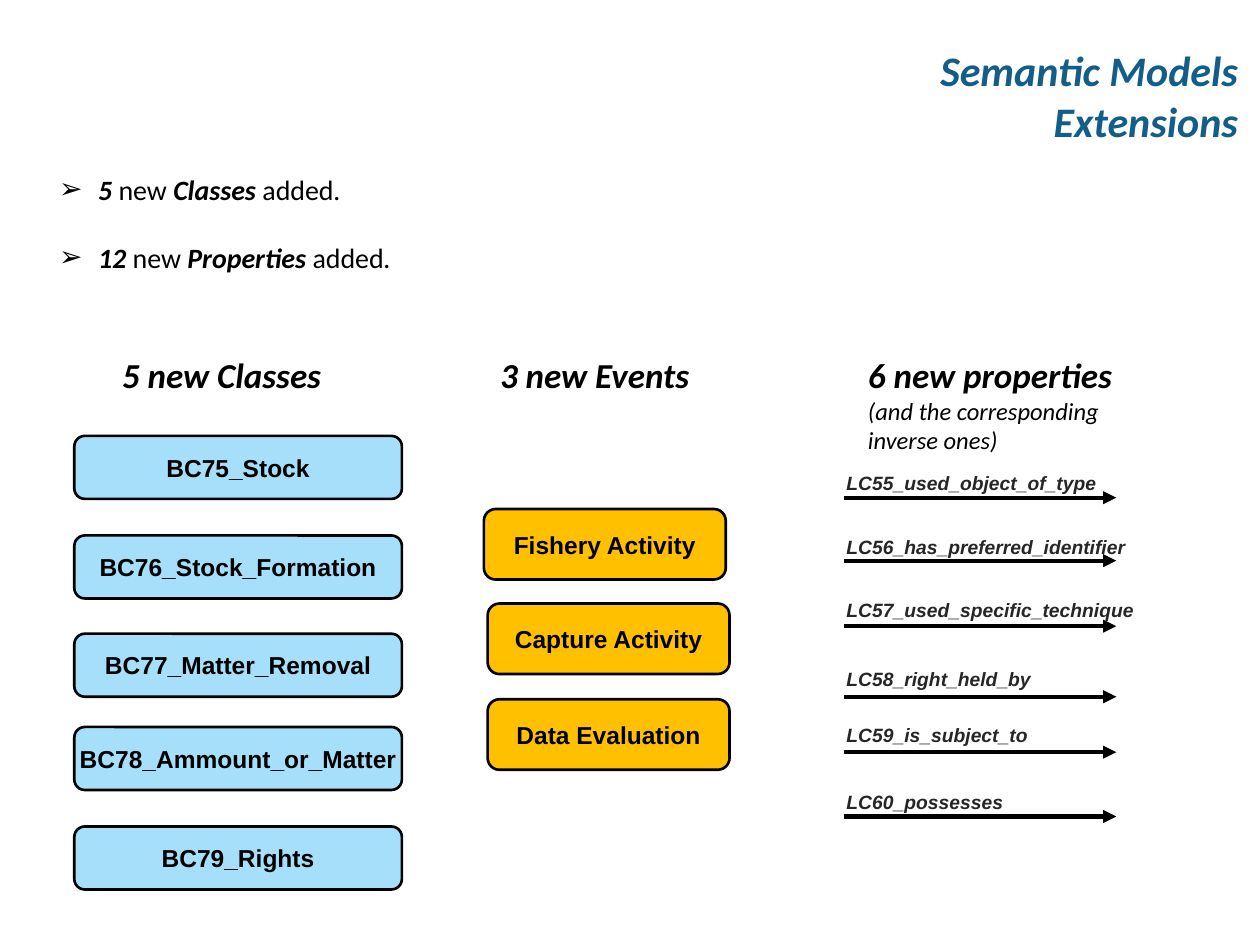
from lxml.etree import SubElement as Sub
from pptx import Presentation
from pptx.dml.color import RGBColor as Rgb
from pptx.enum.shapes import MSO_CONNECTOR as Conn, MSO_SHAPE as Shape
from pptx.enum.text import MSO_ANCHOR as Anchor, PP_ALIGN as Align
from pptx.oxml.ns import qn
from pptx.util import Inches, Pt

HUES = {"title": "125E89", "ink": "000000", "label": "262626",
        "class": "A5DFF9", "event": "FFC000"}

# Text, bold, italic
BULLETS = [
    [("5 ", True, True), ("new ", False, False), ("Classes", True, True),
     (" added", False, False), (".", False, True)],
    [("12 ", True, True), ("new", False, False), (" Properties ", True, True),
     ("added", False, False), (".", False, True)],
]
HEADS = [(0.87, 1.92, "5 new Classes"), (3.87, 1.91, "3 new Events"),
         (6.79, 2.31, "6 new properties ")]
CLASSES = [(3.46, "BC75_Stock"), (4.25, "BC76_Stock_Formation"),
           (5.03, "BC77_Matter_Removal"), (5.77, "BC78_Ammount_or_Matter"),
           (6.56, "BC79_Rights")]
EVENTS = [(3.84, 4.04, "Fishery Activity"), (3.87, 4.79, "Capture Activity"),
          (3.87, 5.55, "Data Evaluation")]
# Label top, arrow height, text
PROPS = [(3.69, 3.95, "LC55_used_object_of_type"),
         (4.2, 4.45, "LC56_has_preferred_identifier"),
         (4.7, 4.97, "LC57_used_specific_technique"),
         (5.25, 5.53, "LC58_right_held_by"),
         (5.69, 5.97, "LC59_is_subject_to"),
         (6.22, 6.48, "LC60_possesses")]


def color(name):
    return Rgb.from_string(HUES[name])


def write(par, text, size, face="Calibri", hue="ink", bold=True, italic=True):
    run = par.add_run()
    run.text = text
    font = run.font
    font.name, font.size = face, Pt(size)
    font.bold, font.italic = bold, italic
    font.color.rgb = color(hue)


class Deck:
    """Holds the shared style and the current slide."""
    edge, stroke = 1.5, 2.5

    def __init__(self):
        self.prs = Presentation()
        self.prs.slide_width, self.prs.slide_height = Inches(10), Inches(7.5)
        self.slide = self.prs.slides.add_slide(self.prs.slide_layouts[6])

    def text(self, *place):
        """Add an empty wrapped text box and return its frame."""
        frame = self.slide.shapes.add_textbox(*map(Inches, place)).text_frame
        frame.word_wrap = True
        return frame

    def title(self, *lines):
        frame = self.text(2.83, 0.13, 7.17, 1.25)
        frame.vertical_anchor = Anchor.MIDDLE
        par = frame.paragraphs[0]
        par.alignment = Align.RIGHT
        for n, line in enumerate(lines):
            if n:
                par.add_line_break()
            write(par, line, 24, hue="title")

    def bullets(self, items):
        frame = self.text(0.37, 1.32, 4.25, 1.45)
        for n, item in enumerate(items):
            par = frame.add_paragraph() if n else frame.paragraphs[0]
            par.alignment = Align.JUSTIFY
            props = par._p.get_or_add_pPr()
            props.set("marL", str(Inches(0.31)))
            props.set("indent", str(Inches(-0.31)))
            if n:
                par.space_before = Pt(19.5)
            Sub(props, qn("a:buFont"), typeface="Arial")
            Sub(props, qn("a:buChar"), char="➢")
            for text, bold, italic in item:
                write(par, text, 16, bold=bold, italic=italic)

    def head(self, left, width, text, note=""):
        par = self.text(left, 2.76, width, 0.91 if note else 0.44).paragraphs[0]
        write(par, text, 20)
        if note:
            write(par, note, 14, bold=False)

    def box(self, left, top, width, height, text, hue):
        box = self.slide.shapes.add_shape(
            Shape.ROUNDED_RECTANGLE, *map(Inches, (left, top, width, height)))
        box.shadow.inherit = False
        box.fill.solid()
        box.fill.fore_color.rgb = color(hue)
        box.line.color.rgb = color("ink")
        box.line.width = Pt(self.edge)
        frame = box.text_frame
        frame.word_wrap = False
        frame.vertical_anchor = Anchor.MIDDLE
        par = frame.paragraphs[0]
        par.alignment = Align.CENTER
        write(par, text, 14, "Arial", italic=False)

    def arrow(self, left, right, y):
        line = self.slide.shapes.add_connector(
            Conn.STRAIGHT, *map(Inches, (left, y, right, y)))
        line.line.color.rgb = color("ink")
        line.line.width = Pt(self.stroke)
        Sub(line.line._get_or_add_ln(), qn("a:tailEnd"), type="triangle")
        Sub(line._element.spPr, qn("a:effectLst"))

    def prop(self, top, y, text):
        """Add a property label with its arrow."""
        self.arrow(6.7, 8.86, y)
        par = self.text(6.62, top, 3.1, 0.29).paragraphs[0]
        write(par, text, 11, "Arial", "label")


def main():
    deck = Deck()
    deck.title("Semantic Models ", "Extensions ")
    deck.bullets(BULLETS)
    for head in HEADS[:2]:
        deck.head(*head)
    deck.head(*HEADS[2], note="(and the corresponding inverse ones)")
    for top, text in CLASSES:
        deck.box(0.59, top, 2.6, 0.5, text, "class")
    for left, top, text in EVENTS:
        deck.box(left, top, 1.92, 0.56, text, "event")
    for prop in PROPS:
        deck.prop(*prop)
    deck.prs.save("out.pptx")


if __name__ == "__main__":
    main()
